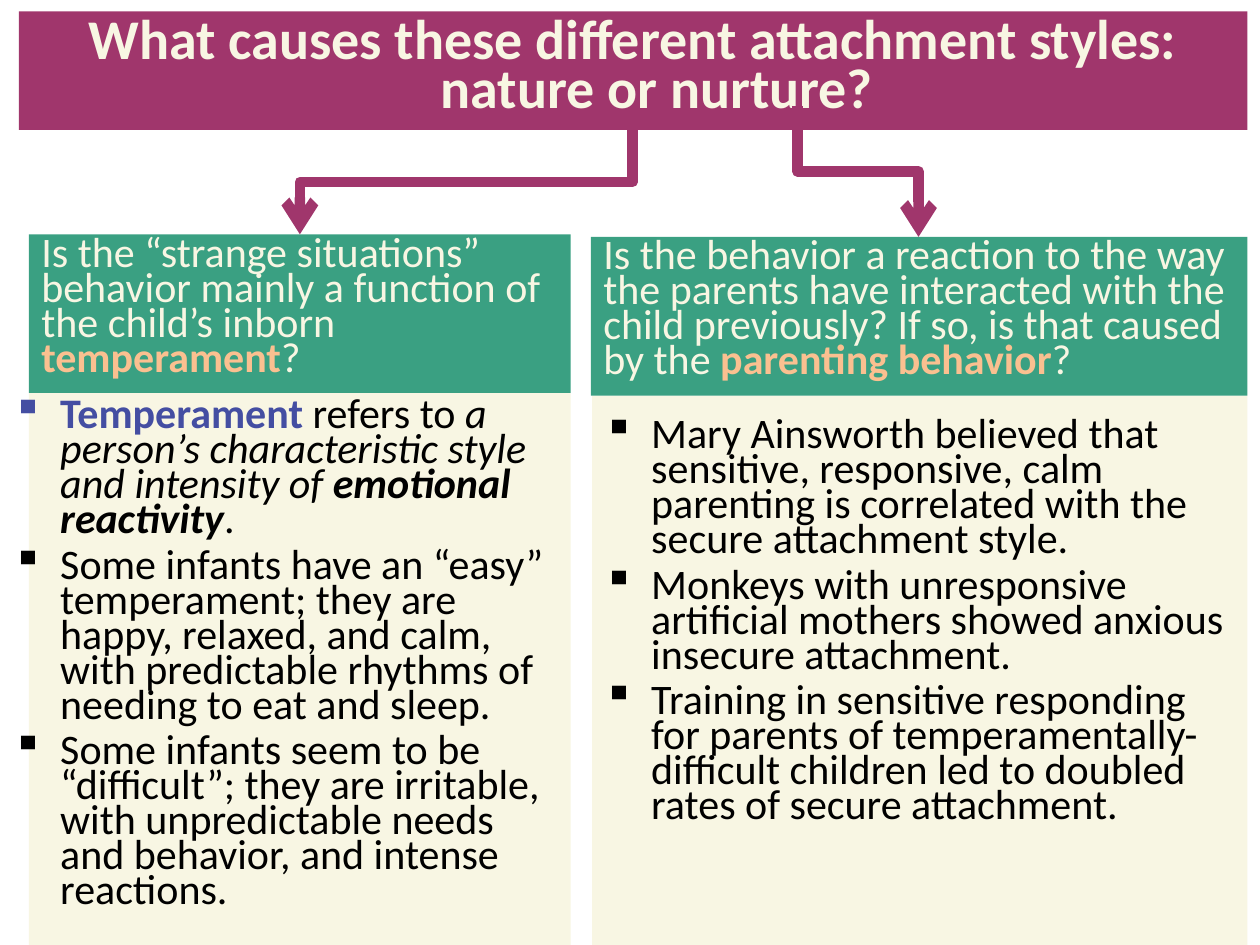
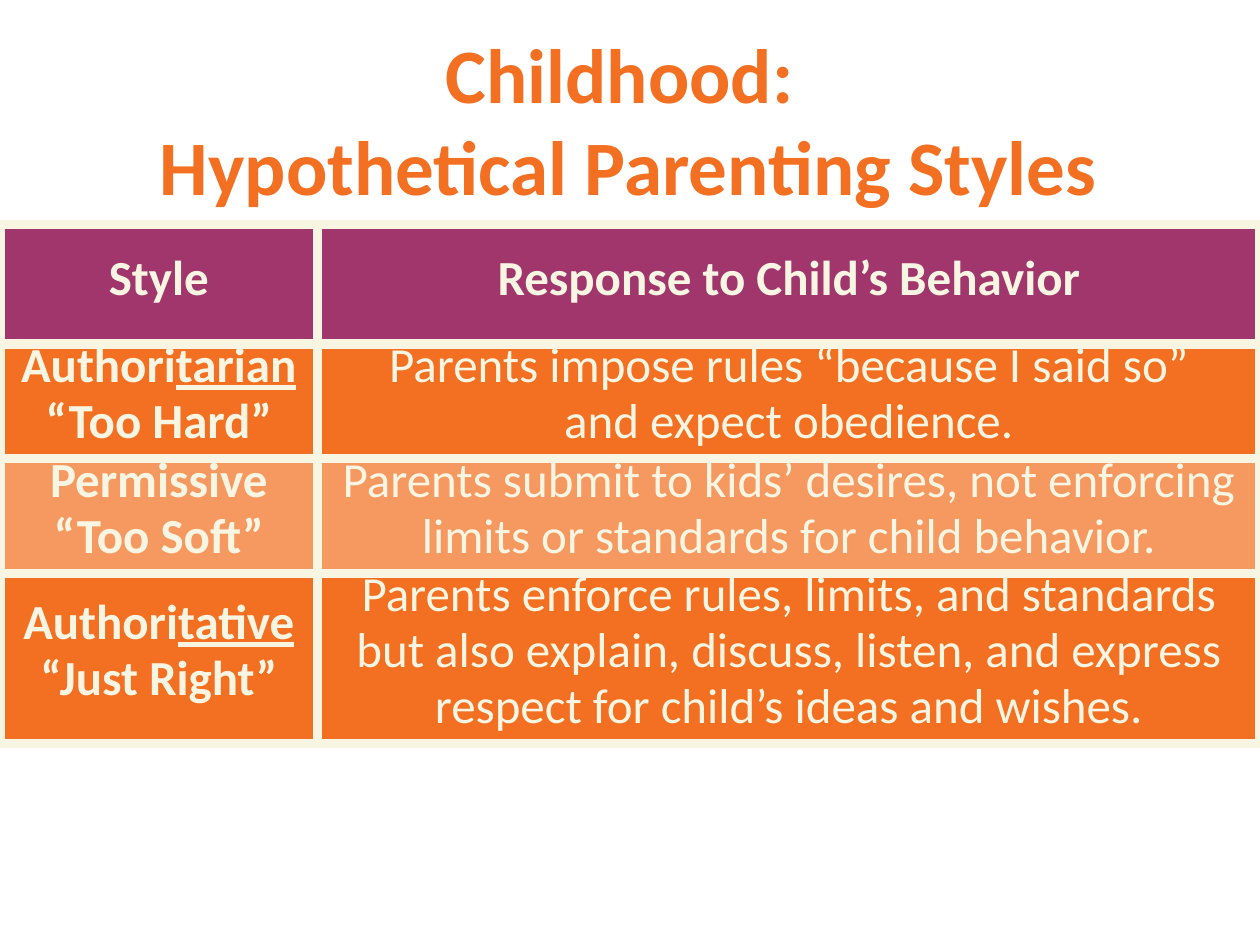
from dataclasses import dataclass

from lxml import etree
from pptx import Presentation
from pptx.dml.color import RGBColor
from pptx.enum.shapes import MSO_CONNECTOR, MSO_SHAPE
from pptx.enum.text import MSO_ANCHOR, MSO_AUTO_SIZE, PP_ALIGN
from pptx.oxml.ns import qn
from pptx.util import Inches, Pt

RECT = MSO_SHAPE.RECTANGLE
ELBOW = MSO_CONNECTOR.ELBOW
TOP, MIDDLE = MSO_ANCHOR.TOP, MSO_ANCHOR.MIDDLE
LEFT, CENTER = PP_ALIGN.LEFT, PP_ALIGN.CENTER
NO_FIT = MSO_AUTO_SIZE.NONE
TITLE_ONLY = 5


@dataclass(frozen=True)
class Theme:
    font: str = "Calibri"
    cream: str = "F8F6E3"
    plum: str = "A0366C"
    green: str = "3AA082"
    peach: str = "FAC090"
    orange: str = "F36F21"
    light: str = "F69960"
    blue: str = "444EA2"
    black: str = "000000"
    title: int = 44
    banner: int = 32
    table: int = 28
    body: int = 24
    line: int = 6
    after: int = 6
    indent: float = 0.38


def rgb(code):
    return RGBColor.from_string(code)


def sub(parent, tag, **attrs):
    node = etree.SubElement(parent, qn(tag))
    for key, value in attrs.items():
        node.set(key, str(value))
    return node


def hang(para, size):
    """Indent a paragraph with a hanging first line."""
    props = para._p.get_or_add_pPr()
    props.set("marL", str(Inches(size)))
    props.set("indent", str(-Inches(size)))
    return props


class Deck:
    def __init__(self, theme):
        self.theme = theme
        self.prs = Presentation()
        self.prs.slide_width = Inches(10)
        self.prs.slide_height = Inches(7.5)
        self.slide = None

    def start(self):
        layout = self.prs.slide_layouts[TITLE_ONLY]
        self.slide = self.prs.slides.add_slide(layout)

    def text(self, frame, paras, size, color, align=LEFT, bold=False,
             pitch=None, bullet=False, indent=0):
        """Fill a frame; a paragraph is a list of strings and (text, style) pairs."""
        frame.word_wrap = True
        for num, parts in enumerate(paras):
            para = frame.paragraphs[0] if num == 0 else frame.add_paragraph()
            para.alignment = align
            if pitch:
                para.line_spacing = Pt(pitch)
                para.space_after = Pt(self.theme.after)
            if indent:
                props = hang(para, indent)
                if bullet:
                    sub(props, "a:buChar", char="▪")
            font = para.font
            font.name, font.size, font.bold = self.theme.font, Pt(size), bold
            font.color.rgb = rgb(color)
            for part in parts:
                words, style = (part, {}) if isinstance(part, str) else part
                self.add_run(para, words, **style)

    def add_run(self, para, words, color=None, **flags):
        for num, line in enumerate(words.split("\n")):
            if num:
                para.add_line_break()
            run = para.add_run()
            run.text = line
            if color:
                run.font.color.rgb = rgb(color)
            for name, value in flags.items():
                setattr(run.font, name, value)

    def title(self, words, box, size, color, **style):
        shape = self.slide.shapes.title
        shape.left, shape.top, shape.width, shape.height = map(Inches, box)
        frame = shape.text_frame
        frame.auto_size = NO_FIT
        frame.vertical_anchor = MIDDLE
        self.text(frame, [[words]], size, color, CENTER, True, **style)
        return shape

    def banner(self, words, box):
        """Put the title on a rounded plum band."""
        theme = self.theme
        shape = self.title(words, box, theme.banner, theme.cream,
                           pitch=28, indent=theme.indent)
        sub(sub(shape._element.spPr, "a:prstGeom", prst="roundRect"), "a:avLst")
        shape.fill.solid()
        shape.fill.fore_color.rgb = rgb(theme.plum)

    def panel(self, box, color, parts=None):
        shape = self.slide.shapes.add_shape(RECT, *map(Inches, box))
        shape.shadow.inherit = False
        shape.fill.solid()
        shape.fill.fore_color.rgb = rgb(color)
        shape.line.fill.background()
        if parts:
            shape.text_frame.vertical_anchor = TOP
            self.text(shape.text_frame, [parts], self.theme.body,
                      self.theme.cream, pitch=20)

    def bullets(self, box, paras):
        frame = self.slide.shapes.add_textbox(*map(Inches, box)).text_frame
        self.text(frame, paras, self.theme.body, self.theme.black,
                  pitch=20, bullet=True, indent=self.theme.indent)

    def elbow(self, start, end):
        """Draw an arrow that goes down, across and down again."""
        (x1, y1), (x2, y2) = start, end
        wide, high = abs(x2 - x1), y2 - y1
        left, top = (x1 + x2 - high) / 2, (y1 + y2 - wide) / 2
        link = self.slide.shapes.add_connector(
            ELBOW, Inches(left), Inches(top),
            Inches(left + high), Inches(top + wide))
        props = link._element.spPr
        turn = 90 if x2 < x1 else 270
        props.xfrm.set("rot", str(turn * 60000))
        if x2 > x1:
            props.xfrm.set("flipH", "1")
        link.line.color.rgb = rgb(self.theme.plum)
        link.line.width = Pt(self.theme.line)
        sub(props.find(qn("a:ln")), "a:tailEnd", type="arrow")
        sub(props, "a:effectLst")

    def table(self, box, cols, highs, rows, fills):
        frame = self.slide.shapes.add_table(
            len(rows), len(cols), *map(Inches, box))
        grid = frame.table
        grid.first_row = grid.horz_banding = False
        for col, width in zip(grid.columns, cols):
            col.width = Inches(width)
        for num, (row, high) in enumerate(zip(grid.rows, highs)):
            row.height = Inches(high)
            for pos, cell in enumerate(row.cells):
                self.cell(cell, rows[num][pos], fills[num],
                          bold=num == 0 or pos == 0,
                          pitch=28 if num == 0 else 26)

    def cell(self, cell, paras, fill, bold, pitch):
        theme = self.theme
        cell.vertical_anchor = MIDDLE
        props = cell._tc.get_or_add_tcPr()
        for side in "LRTB":
            edge = sub(props, f"a:ln{side}", w=Pt(theme.line))
            sub(sub(edge, "a:solidFill"), "a:srgbClr", val=theme.cream)
        cell.fill.solid()
        cell.fill.fore_color.rgb = rgb(fill)
        self.text(cell.text_frame, paras, theme.table, theme.cream,
                  CENTER, bold, pitch)


def causes(deck):
    theme = deck.theme
    key = {"color": theme.peach, "bold": True}
    deck.start()
    deck.banner("What causes these different attachment styles:\n"
                "nature or nurture?", (0.15, 0.09, 9.75, 0.94))
    deck.panel((4.7, 3.14, 5.2, 4.36), theme.cream)
    deck.panel((0.23, 3.12, 4.3, 4.38), theme.cream)
    deck.panel((4.69, 1.88, 5.21, 1.26), theme.green, [
        "Is the behavior a reaction to the way the parents have interacted "
        "with the child previously? If so, is that caused by the ",
        ("parenting behavior", key), "?"])
    deck.panel((0.23, 1.86, 4.3, 1.26), theme.green, [
        "Is the “strange situations” behavior mainly a function of "
        "the child’s inborn ", ("temperament", key), "?"])
    deck.elbow((5.02, 1.03), (2.38, 1.86))
    deck.elbow((6.33, 0.84), (7.29, 1.88))
    deck.bullets((0, 3.14, 4.53, 4.2), [
        [("Temperament", {"color": theme.blue, "bold": True}), " refers to ",
         ("a person’s characteristic style and intensity of ",
          {"italic": True}),
         ("emotional reactivity", {"bold": True, "italic": True}), "."],
        ["Some infants have an “easy” temperament; they are happy, relaxed, "
         "and calm, with predictable rhythms of needing to eat and sleep."],
        ["Some infants seem to be “difficult”; they are irritable, with "
         "unpredictable needs and behavior, and intense reactions."]])
    deck.bullets((4.69, 3.3, 5.21, 3.35), [
        ["Mary Ainsworth believed that sensitive, responsive, calm parenting "
         "is correlated with the secure attachment style."],
        ["Monkeys with unresponsive artificial mothers showed anxious "
         "insecure attachment."],
        ["Training in sensitive responding for parents of "
         "temperamentally-difficult children led to doubled rates of "
         "secure attachment."]])


def styles(deck):
    theme = deck.theme
    under = {"underline": True}
    deck.start()
    deck.title("Childhood: \nHypothetical Parenting Styles",
               (0.49, 0.38, 9, 1.12), theme.title, theme.orange)
    rows = [
        ([["Style"]], [["Response to Child’s Behavior"]]),
        ([["Authori", ("tarian", under)], ["“Too Hard”"]],
         [["Parents impose rules “because I said so”"],
          ["and expect obedience."]]),
        ([["Permissive"], ["“Too Soft”"]],
         [["Parents submit to kids’ desires, not enforcing"],
          ["limits or standards for child behavior."]]),
        ([["Authori", ("tative", under)], ["“Just Right”"]],
         [["Parents enforce rules, limits, and standards"],
          ["but also explain, discuss, listen, and express"],
          ["respect for child’s ideas and wishes."]]),
    ]
    deck.table((0, 1.78, 10, 4.12), (2.52, 7.48), (0.95, 0.91, 0.91, 1.35),
               rows, (theme.plum, theme.orange, theme.light, theme.orange))


def main():
    deck = Deck(Theme())
    causes(deck)
    styles(deck)
    deck.prs.save("out.pptx")


if __name__ == "__main__":
    main()
